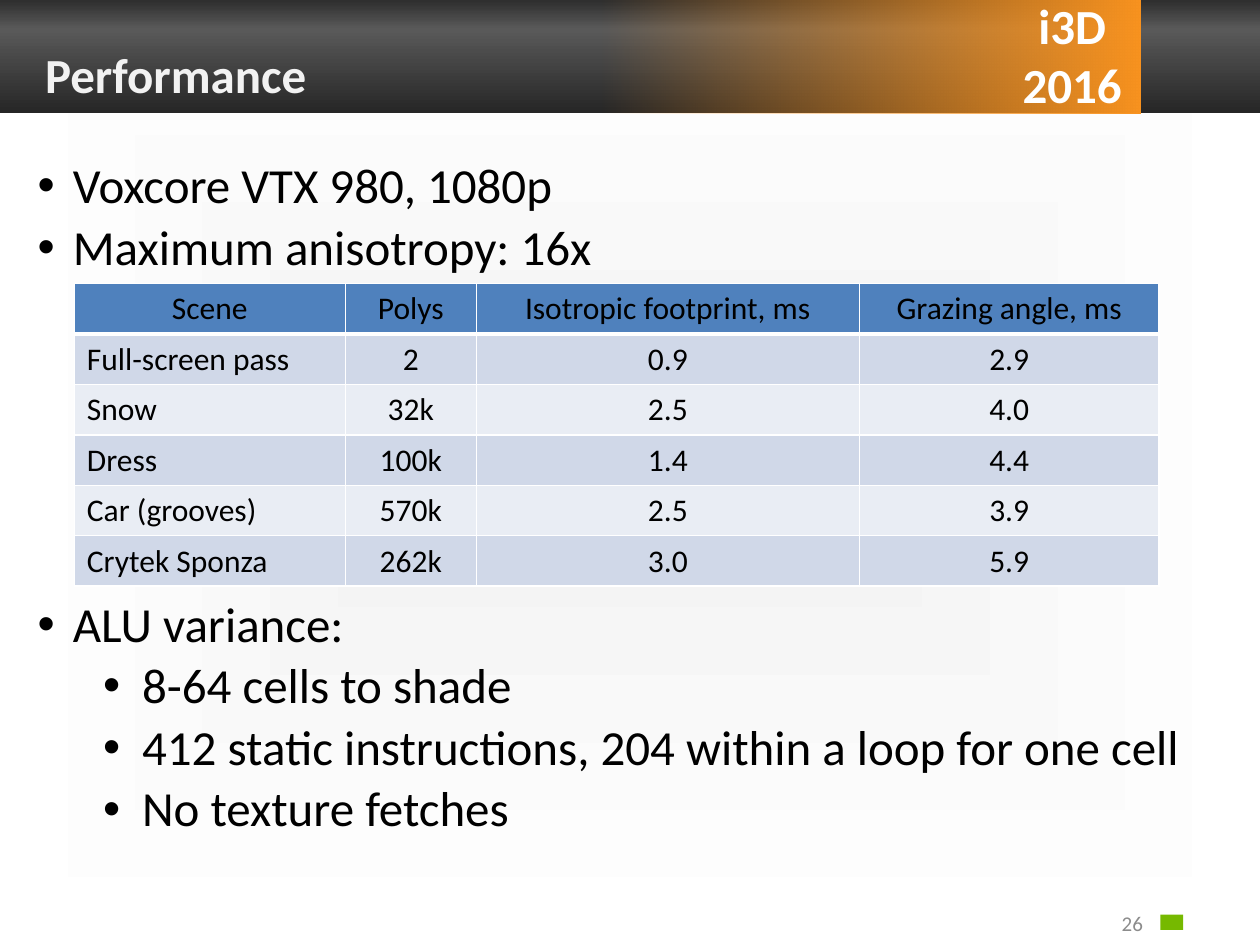
from lxml.etree import SubElement
from pptx import Presentation
from pptx.dml.color import RGBColor
from pptx.enum.shapes import MSO_SHAPE
from pptx.enum.text import MSO_ANCHOR, PP_ALIGN
from pptx.oxml.ns import qn
from pptx.util import Inches, Pt

FONT = "Calibri"
ORANGE = "F9931F"
MARGIN_LEFT, CONTENT_WIDTH = 0.2, 9.65
HEADERS = ["Scene", "Polys", "Isotropic footprint, ms", "Grazing angle, ms"]
TIMINGS = [
    ["Full-screen pass", "2", "0.9", "2.9"],
    ["Snow", "32k", "2.5", "4.0"],
    ["Dress", "100k", "1.4", "4.4"],
    ["Car (grooves)", "570k", "2.5", "3.9"],
    ["Crytek Sponza", "262k", "3.0", "5.9"],
]
COLUMN_WIDTHS = [2.15, 1.04, 3.04, 2.38]
SETUP = [(1, "Voxcore VTX 980, 1080p"), (1, "Maximum anisotropy: 16x")]
ALU_COST = [
    (1, "ALU variance:"),
    (2, "8-64 cells to shade"),
    (2, "412 static instructions, 204 within a loop for one cell"),
    (2, "No texture fetches"),
]
LEVEL_INDENTS = {1: 0.28, 2: 0.83}


def color(value):
    return RGBColor.from_string(value)


def paint_gradient(fill, owner, stops, angle=None):
    """Stops are (percent, colour, alpha percent); no angle means a gradient from the centre."""
    fill.gradient()
    gradient = next(owner.iter(qn("a:gradFill")))
    stop_list = gradient.find(qn("a:gsLst"))
    for old_stop in list(stop_list):
        stop_list.remove(old_stop)
    for position, value, alpha in stops:
        stop = SubElement(stop_list, qn("a:gs"), pos=str(position * 1000))
        stop_color = SubElement(stop, qn("a:srgbClr"), val=value)
        if alpha < 100:
            SubElement(stop_color, qn("a:alpha"), val=str(alpha * 1000))
    direction = gradient.find(qn("a:lin"))
    if angle is not None:
        direction.set("ang", str(angle * 60000))
        return
    gradient.remove(direction)
    center = SubElement(gradient, qn("a:path"), {"path": "shape"})
    SubElement(center, qn("a:fillToRect"), dict.fromkeys("ltrb", "50000"))


def add_plain_box(slide, box):
    shape = slide.shapes.add_shape(MSO_SHAPE.RECTANGLE, *map(Inches, box))
    shape.shadow.inherit = False
    shape.line.fill.background()
    return shape


def add_text_frame(slide, box, anchor=MSO_ANCHOR.TOP):
    frame = slide.shapes.add_textbox(*map(Inches, box)).text_frame
    frame.word_wrap = True
    frame.vertical_anchor = anchor
    return frame


def add_run(paragraph, text, size, value="000000", bold=False):
    run = paragraph.add_run()
    run.text = text
    run.font.name = FONT
    run.font.size = Pt(size)
    run.font.bold = bold
    run.font.color.rgb = color(value)
    return run


def indent(paragraph, left, first=0):
    properties = paragraph._p.get_or_add_pPr()
    properties.set("marL", str(Inches(left)))
    properties.set("indent", str(Inches(first)))
    return properties


def add_header(slide, box):
    left, top, width, height = box
    bar = add_plain_box(slide, box)
    paint_gradient(bar.fill, bar._element,
                   [(0, "262626", 100), (29, "595959", 100), (100, "262626", 100)], 90)
    glow = add_plain_box(slide, (left + 4.76, top, 4.29, height))
    paint_gradient(glow.fill, glow._element, [(0, ORANGE, 100), (100, ORANGE, 0)], 180)

    badge = add_text_frame(slide, (left + 7.95, top, 1.06, height + 0.01), MSO_ANCHOR.BOTTOM)
    badge.margin_left = badge.margin_right = 0
    badge.margin_top = badge.margin_bottom = Inches(0.01)
    event = badge.paragraphs[0]
    event.alignment = PP_ALIGN.CENTER
    indent(event, 0.06)
    add_run(event, "i3D", 28, "FFFFFF", True)
    event.add_line_break()
    add_run(event, "2016", 28, "FFFFFF", True)

    title = add_text_frame(slide, (left + MARGIN_LEFT, top + 0.25, CONTENT_WIDTH, 0.62),
                           MSO_ANCHOR.BOTTOM)
    title.margin_bottom = Inches(0.01)
    heading = title.paragraphs[0]
    indent(heading, 0.06)
    run = add_run(heading, "Performance", 28, bold=True)
    paint_gradient(run.font.fill, run._r, [(0, "F2F2F2", 100), (100, "D9D9D9", 100)], 90)


def add_bullets(slide, box, items):
    frame = add_text_frame(slide, box)
    for index, (level, text) in enumerate(items):
        paragraph = frame.add_paragraph() if index else frame.paragraphs[0]
        properties = indent(paragraph, LEVEL_INDENTS[level], -0.31)
        SubElement(properties, qn("a:buFont"), typeface="Arial")
        SubElement(properties, qn("a:buChar"), char="•")
        paragraph.level = level - 1
        paragraph.line_spacing = 0.9
        if index:
            paragraph.space_before = Pt(5)
        add_run(paragraph, text, 28)


def set_borders(cell, bottom_width):
    properties = cell._tc.get_or_add_tcPr()
    widths = {"lnL": 1, "lnR": 1, "lnT": 1, "lnB": bottom_width}
    for position, (side, width) in enumerate(widths.items()):
        line = SubElement(properties, qn(f"a:{side}"), w=str(Pt(width)))
        fill = SubElement(line, qn("a:solidFill"))
        SubElement(fill, qn("a:srgbClr"), val="FFFFFF")
        properties.insert(position, line)


def add_timings(slide, box):
    rows = [HEADERS] + TIMINGS
    table = slide.shapes.add_table(len(rows), len(HEADERS), *map(Inches, box)).table
    for column, width in zip(table.columns, COLUMN_WIDTHS):
        column.width = Inches(width)
    for r, values in enumerate(rows):
        fill = "4F81BD" if r == 0 else ("E9EDF4", "D0D8E8")[r % 2]
        for c, value in enumerate(values):
            cell = table.cell(r, c)
            cell.fill.solid()
            cell.fill.fore_color.rgb = color(fill)
            set_borders(cell, 3 if r == 0 else 1)
            paragraph = cell.text_frame.paragraphs[0]
            paragraph.alignment = PP_ALIGN.LEFT if r and c == 0 else PP_ALIGN.CENTER
            add_run(paragraph, value, 18)


def add_footer(slide, box):
    left, top, width, height = box
    page = add_text_frame(slide, (left, top, 0.66, height), MSO_ANCHOR.MIDDLE).paragraphs[0]
    page.alignment = PP_ALIGN.RIGHT
    add_run(page, "26", 12, "8C8C8C")
    emblem = add_plain_box(slide, (left + 0.7, top + 0.05, 0.18, 0.12))
    emblem.fill.solid()
    emblem.fill.fore_color.rgb = color("76B900")


def main():
    deck = Presentation()
    deck.slide_width, deck.slide_height = Inches(10), Inches(7.5)
    slide = deck.slides.add_slide(deck.slide_layouts[6])
    paint_gradient(slide.background.fill, slide._element,
                   [(0, "F2F2F2", 100), (100, "FFFFFF", 100)])
    add_header(slide, (0, -0.04, 10, 0.94))
    add_bullets(slide, (MARGIN_LEFT, 1.23, CONTENT_WIDTH, 1), SETUP)
    add_bullets(slide, (MARGIN_LEFT, 4.71, CONTENT_WIDTH, 2.48), ALU_COST)
    add_timings(slide, (0.59, 2.25, sum(COLUMN_WIDTHS), 2.4))
    add_footer(slide, (8.51, 7.21, 1.34, 0.23))
    deck.save("out.pptx")


if __name__ == "__main__":
    main()
